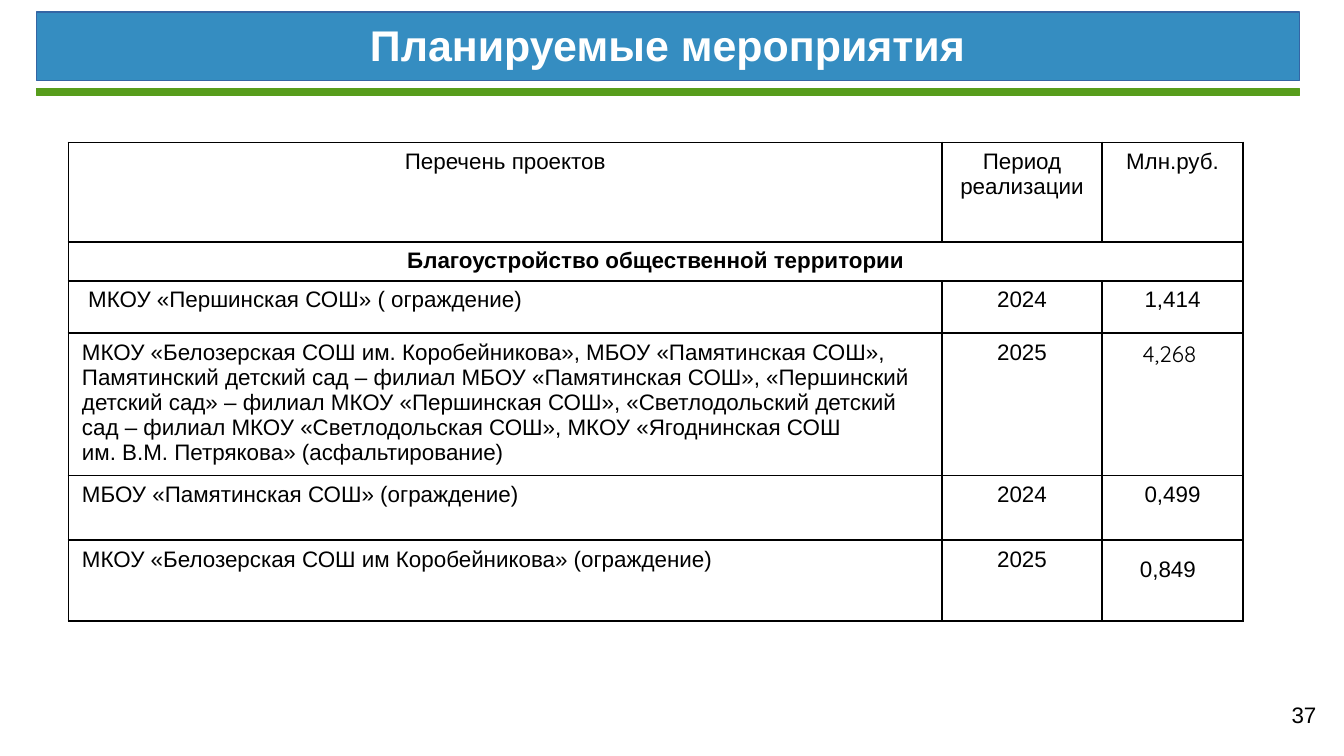
from copy import deepcopy

from lxml.etree import SubElement
from pptx import Presentation
from pptx.dml.color import RGBColor
from pptx.enum.shapes import MSO_SHAPE
from pptx.enum.text import MSO_ANCHOR, PP_ALIGN
from pptx.oxml.ns import qn
from pptx.util import Inches, Pt

BLACK = RGBColor(0x00, 0x00, 0x00)
WHITE = RGBColor(0xFF, 0xFF, 0xFF)
BLUE = RGBColor(0x35, 0x8D, 0xC1)
BLUE_EDGE = RGBColor(0x34, 0x65, 0xA4)
GREEN = RGBColor(0x57, 0x9D, 0x1C)

TITLE_ONLY_LAYOUT = 5
BAND_LEFT, BAND_WIDTH = 0.27, 9.4
COLUMN_WIDTHS = [6.5, 1.19, 1.05]
ROW_HEIGHTS = [0.74, 0.29, 0.39, 1.06, 0.48, 0.6]
SECTION_ROW = 1
ROWS = [
    ("Перечень проектов", "Период реализации", "Млн.руб."),
    ("Благоустройство общественной территории",),
    (" МКОУ «Першинская СОШ» ( ограждение)", "2024", "1,414"),
    (
        "МКОУ «Белозерская СОШ им. Коробейникова», МБОУ «Памятинская СОШ», \n"
        "Памятинский детский сад – филиал МБОУ «Памятинская СОШ», "
        "«Першинский детский сад» – филиал МКОУ «Першинская СОШ», "
        "«Светлодольский детский сад – филиал МКОУ «Светлодольская СОШ», "
        "МКОУ «Ягоднинская СОШ \nим. В.М. Петрякова» (асфальтирование)",
        "2025",
        "4,268 ",
    ),
    ("МБОУ «Памятинская СОШ» (ограждение)", "2024", "0,499"),
    ("МКОУ «Белозерская СОШ им Коробейникова» (ограждение)", "2025", "0,849"),
]
CELL_FONTS = {(3, 2): "Quicksand"}


def format_run(run, size, font, color, bold):
    run.font.size = Pt(size)
    run.font.name = font
    run.font.color.rgb = color
    run.font.bold = bold


def write_text(text_frame, text, size=12, font="Arial", color=BLACK, bold=False,
               align=PP_ALIGN.LEFT):
    """Fill the first paragraph; line breaks take the format of the text."""
    paragraph = text_frame.paragraphs[0]
    paragraph.text = text
    paragraph.alignment = align
    for run in paragraph.runs:
        format_run(run, size, font, color, bold)
    properties = paragraph.runs[0].font._element
    for line_break in paragraph._p.findall(qn("a:br")):
        line_break.append(deepcopy(properties))
    return paragraph


def set_margins(text_frame, horizontal, top, bottom):
    text_frame.margin_left = text_frame.margin_right = Inches(horizontal)
    text_frame.margin_top = Inches(top)
    text_frame.margin_bottom = Inches(bottom)


def place(shape, left, top, width, height):
    shape.left, shape.top = Inches(left), Inches(top)
    shape.width, shape.height = Inches(width), Inches(height)


def paint(shape, fill, line):
    shape.fill.solid()
    shape.fill.fore_color.rgb = fill
    shape.line.color.rgb = line
    shape.line.width = Pt(0.75)


def set_borders(cell, color=BLACK, width=0.96):
    properties = cell._tc.get_or_add_tcPr()
    for position, side in enumerate(("a:lnL", "a:lnR", "a:lnT", "a:lnB")):
        line = properties.makeelement(qn(side), {"w": str(Pt(width))})
        fill = SubElement(line, qn("a:solidFill"))
        SubElement(fill, qn("a:srgbClr"), val=str(color))
        properties.insert(position, line)


def add_title(slide, text):
    title = slide.shapes.title
    place(title, BAND_LEFT, 0.09, BAND_WIDTH, 0.51)
    paint(title, BLUE, BLUE_EDGE)
    set_margins(title.text_frame, 0.09, 0.04, 0.07)
    title.text_frame.vertical_anchor = MSO_ANCHOR.MIDDLE
    write_text(title.text_frame, text, size=23, color=WHITE, bold=True,
               align=PP_ALIGN.CENTER)


def add_green_rule(slide):
    rule = slide.shapes.add_shape(
        MSO_SHAPE.RECTANGLE, Inches(BAND_LEFT), Inches(0.66),
        Inches(BAND_WIDTH), Inches(0.05))
    rule.shadow.inherit = False
    paint(rule, GREEN, GREEN)


def add_project_table(slide):
    frame = slide.shapes.add_table(
        len(ROWS), len(COLUMN_WIDTHS), Inches(0.51), Inches(1.06),
        Inches(sum(COLUMN_WIDTHS)), Inches(sum(ROW_HEIGHTS)))
    table = frame.table
    table.first_row = table.horz_banding = False
    for column, width in zip(table.columns, COLUMN_WIDTHS):
        column.width = Inches(width)
    for row, height in zip(table.rows, ROW_HEIGHTS):
        row.height = Inches(height)
    for cell in table.iter_cells():
        cell.fill.background()
        set_borders(cell)
    table.cell(SECTION_ROW, 0).merge(table.cell(SECTION_ROW, 2))

    for row_index, texts in enumerate(ROWS):
        for column_index, text in enumerate(texts):
            is_project = column_index == 0 and row_index > SECTION_ROW
            paragraph = write_text(
                table.cell(row_index, column_index).text_frame, text,
                font=CELL_FONTS.get((row_index, column_index), "Arial"),
                bold=row_index == SECTION_ROW,
                align=PP_ALIGN.LEFT if is_project else PP_ALIGN.CENTER)
    # The last amount ends in a larger space, which lowers its baseline.
    space = paragraph.add_run()
    space.text = " "
    format_run(space, 18, "Arial", BLACK, False)


def add_page_number(slide, number):
    box = slide.shapes.add_textbox(
        Inches(9.53), Inches(5.17), Inches(0.47), Inches(0.39))
    box.text_frame.word_wrap = True
    set_margins(box.text_frame, 0.08, 0.05, 0.04)
    write_text(box.text_frame, number)


def main():
    presentation = Presentation()
    presentation.slide_width = Inches(10)
    presentation.slide_height = presentation.slide_width * 9 // 16
    slide = presentation.slides.add_slide(
        presentation.slide_layouts[TITLE_ONLY_LAYOUT])
    add_project_table(slide)
    add_title(slide, "Планируемые мероприятия")
    add_green_rule(slide)
    add_page_number(slide, "37")
    presentation.save("out.pptx")


if __name__ == "__main__":
    main()
